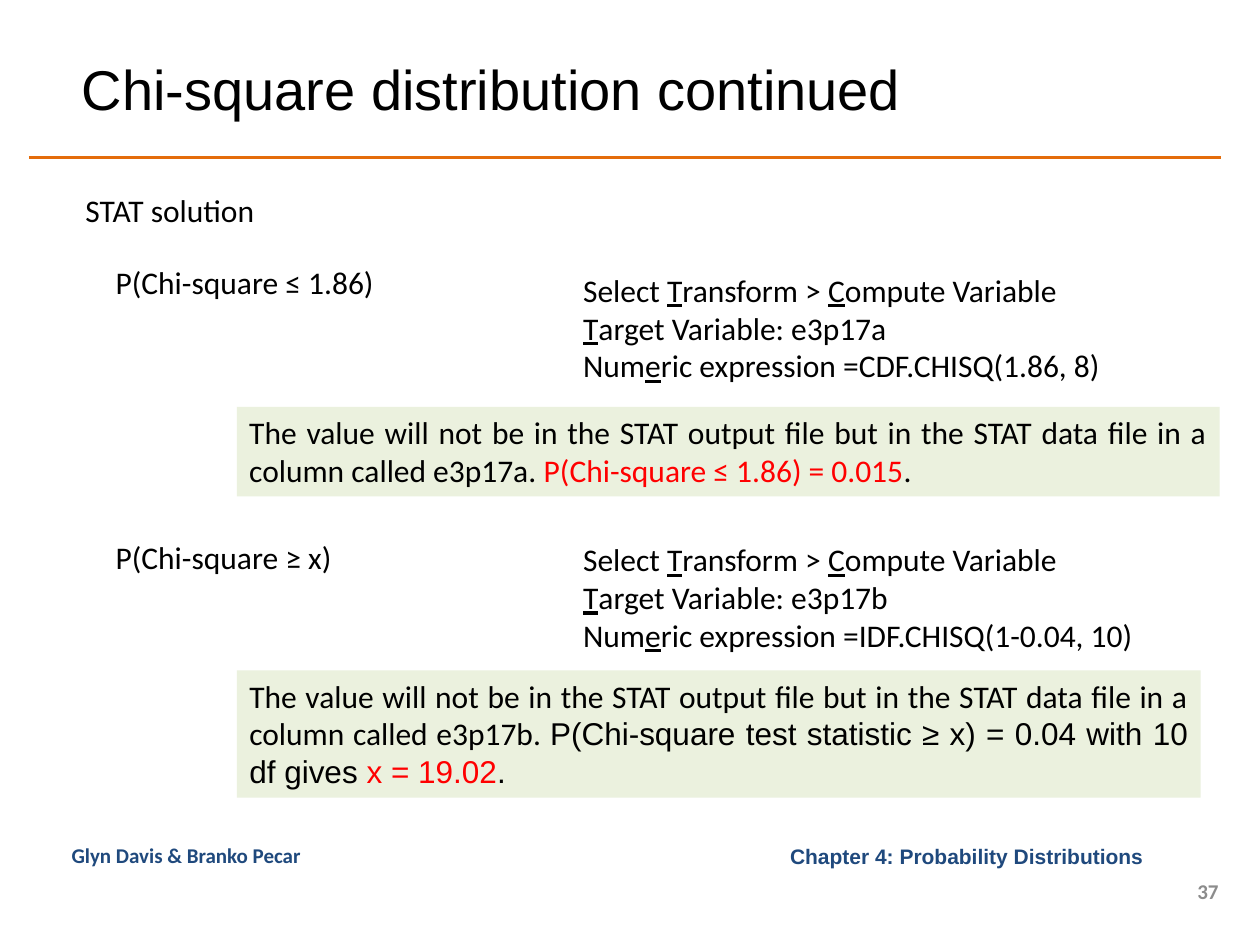
from lxml.etree import SubElement
from pptx import Presentation
from pptx.dml.color import RGBColor
from pptx.enum.shapes import MSO_CONNECTOR, MSO_SHAPE
from pptx.enum.text import MSO_ANCHOR, PP_ALIGN
from pptx.oxml.ns import qn
from pptx.util import Inches, Pt

BLACK, RED, NAVY, GREY = "000000", "FF0000", "1F497D", "8C8C8C"
ORANGE, GREEN = "E46C0A", "EBF1DE"
LEFT, RIGHT, EVEN = PP_ALIGN.LEFT, PP_ALIGN.RIGHT, PP_ALIGN.JUSTIFY


def color(code):
    """Turn a hex string into a colour."""
    return RGBColor.from_string(code)


def style(para, size=18, face="Calibri", ink=BLACK, bold=False, align=LEFT):
    """Set the font and alignment of a paragraph."""
    para.alignment = align
    font = para.font
    font.size, font.name, font.bold = Pt(size), face, bold
    font.color.rgb = color(ink)


def label(slide, box, text, anchor=MSO_ANCHOR.TOP, wrap=True, **look):
    """Add a text box with one line of text."""
    frame = slide.shapes.add_textbox(*map(Inches, box)).text_frame
    frame.word_wrap, frame.vertical_anchor = wrap, anchor
    para = frame.paragraphs[0]
    para.text = text
    style(para, **look)


def menu(slide, box, lines):
    """Add menu steps; letters between underscores are underlined."""
    frame = slide.shapes.add_textbox(*map(Inches, box)).text_frame
    frame.word_wrap = True
    for row, line in enumerate(lines):
        para = frame.add_paragraph() if row else frame.paragraphs[0]
        style(para, align=EVEN)
        for part, text in enumerate(line.split("_")):
            run = para.add_run()
            run.text = text
            run.font.underline = part % 2 == 1


def note(slide, box, parts):
    """Add a green panel of (text, face, ink) parts."""
    panel = slide.shapes.add_shape(MSO_SHAPE.RECTANGLE, *map(Inches, box))
    panel.shadow.inherit = False
    panel.fill.solid()
    panel.fill.fore_color.rgb = color(GREEN)
    panel.line.fill.background()
    frame = panel.text_frame
    frame.word_wrap, frame.vertical_anchor = True, MSO_ANCHOR.TOP
    para = frame.paragraphs[0]
    style(para, align=EVEN)
    for text, face, ink in parts:
        run = para.add_run()
        run.text = text
        run.font.name = face
        run.font.color.rgb = color(ink)


def header(slide, left, top):
    """Add the title and the rule below it."""
    ends = left, top + 1.25, left + 9.46, top + 1.25
    rule = slide.shapes.add_connector(MSO_CONNECTOR.STRAIGHT, *map(Inches, ends))
    rule.line.color.rgb = color(ORANGE)
    rule.line.width = Pt(2)
    SubElement(rule._element.spPr, qn("a:effectLst"))
    label(slide, (left + 0.32, top + 0.31, 7.58, 0.78),
          "Chi-square distribution continued", MSO_ANCHOR.MIDDLE,
          size=32, face="Arial")


def footer(slide, left, top):
    """Add the authors, the chapter and the page number."""
    look = {"size": 12, "bold": True}
    label(slide, (left, top, 2.97, 0.31), "Glyn Davis & Branko Pecar",
          ink=NAVY, **look)
    label(slide, (left + 5, top, 3.75, 0.31),
          "Chapter 4: Probability Distributions ", MSO_ANCHOR.MIDDLE,
          face="Arial", ink=NAVY, align=RIGHT, **look)
    label(slide, (left + 8.83, top + 0.31, 0.47, 0.24), "37",
          MSO_ANCHOR.MIDDLE, ink=GREY, align=RIGHT, **look)


def case(slide, left, top, drop, size, gap, goal, name, call, parts):
    """Add one problem: its goal, menu steps and result panel."""
    label(slide, (left, top, 2.27, 0.4), goal, wrap=False)
    menu(slide, (left + 3.71, top + drop, 5, 1.01),
         ["Select _T_ransform > _C_ompute Variable",
          f"_T_arget Variable: {name}",
          f"Num_e_ric expression ={call}"])
    lead = ("The value will not be in the STAT output file but in the STAT "
            f"data file in a column called {name}. ")
    note(slide, (left + 1.06, top + gap, *size),
         [(lead, "Calibri", BLACK), *parts])


def main():
    """Build and save the slide."""
    deck = Presentation()
    deck.slide_width, deck.slide_height = Inches(10), Inches(7.5)
    slide = deck.slides.add_slide(deck.slide_layouts[6])
    header(slide, 0.23, 0)
    label(slide, (0.58, 1.47, 1.6, 0.4), "STAT solution", wrap=False, align=EVEN)
    case(slide, 0.82, 2.04, 0.06, (7.8, 0.71), 1.19,
         "P(Chi-square ≤ 1.86)", "e3p17a", "CDF.CHISQ(1.86, 8)",
         [("P(Chi-square ≤ 1.86) = 0.015", "Calibri", RED),
          (".", "Calibri", BLACK)])
    case(slide, 0.82, 4.22, 0.02, (7.65, 1.01), 1.1,
         "P(Chi-square ≥ x)", "e3p17b", "IDF.CHISQ(1-0.04, 10)",
         [("P(Chi-square test statistic ≥ x) = 0.04 with 10 df gives ",
           "Arial", BLACK),
          ("x = 19.02", "Arial", RED), (".", "Arial", BLACK)])
    footer(slide, 0.47, 6.64)
    deck.save("out.pptx")


if __name__ == "__main__":
    main()
